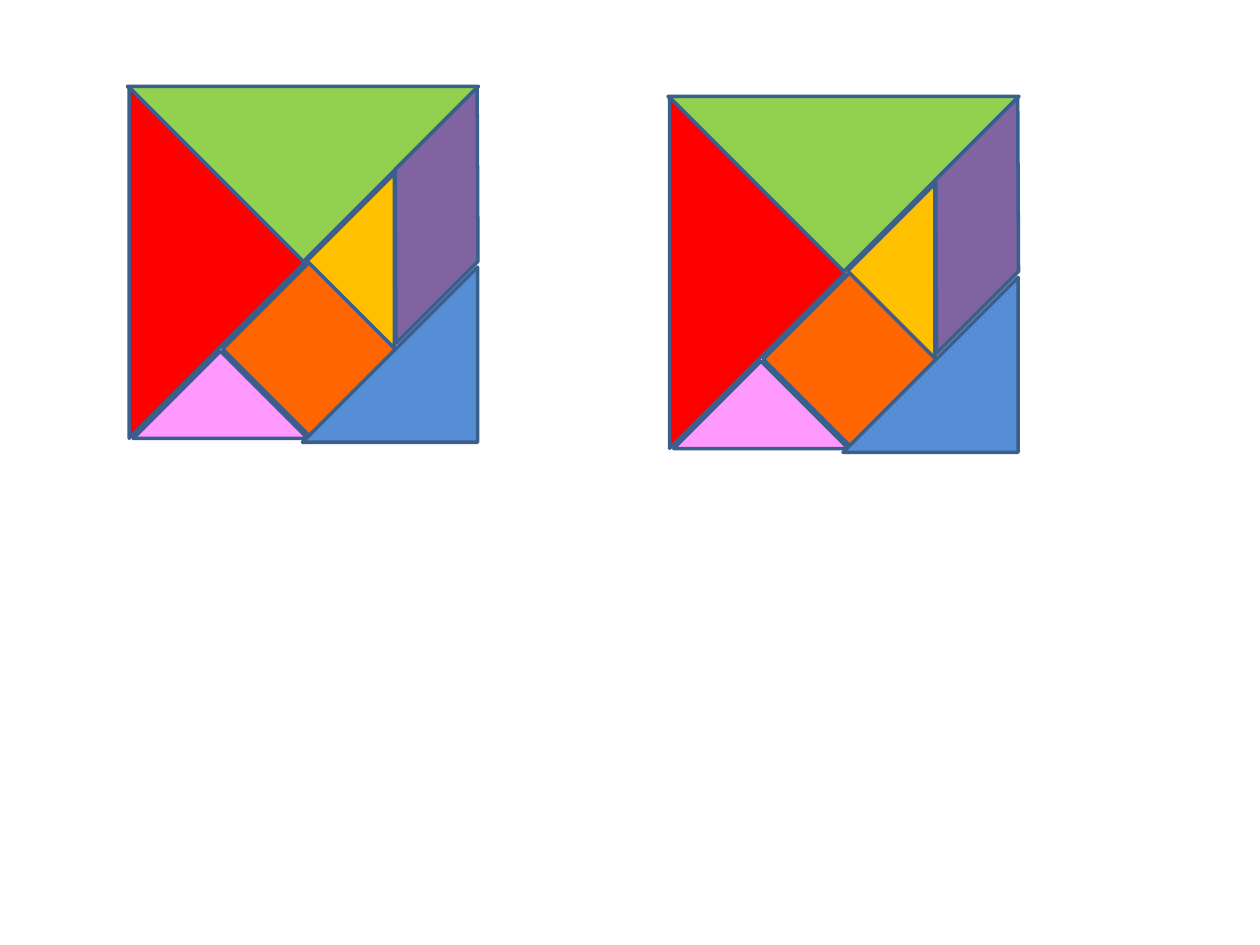
from dataclasses import dataclass

from pptx import Presentation
from pptx.dml.color import RGBColor
from pptx.enum.shapes import MSO_SHAPE
from pptx.util import Pt

PX = 9144
OUTLINE = "3A5F8C"
TRIANGLE = MSO_SHAPE.RIGHT_TRIANGLE


@dataclass(frozen=True)
class Piece:
    kind: MSO_SHAPE
    left: int
    top: int
    width: int
    height: int
    rotation: int
    fill: str
    slant: float | None = None


PIECES = [
    Piece(TRIANGLE, 142, -30, 197, 197, 315, "92D050"),
    Piece(TRIANGLE, 4, 110, 197, 197, 225, "FF0000"),
    Piece(MSO_SHAPE.RECTANGLE, 197, 228, 98, 98, 45, "FF6600"),
    Piece(TRIANGLE, 126, 299, 98, 98, 135, "FF99FF"),
    Piece(TRIANGLE, 264, 158, 98, 98, 45, "FFC000"),
    Piece(MSO_SHAPE.PARALLELOGRAM, 252, 122, 189, 98, 135, "8064A2", 0.99),
    Piece(TRIANGLE, 240, 212, 139, 139, 270, "558ED5"),
]
TANGRAM_OFFSETS = [(0, 0), (429, 8)]


def rgb(color: str) -> RGBColor:
    return RGBColor.from_string(color)


def draw_piece(s, piece: Piece, dx: int, dy: int) -> None:
    box = (piece.left + dx, piece.top + dy, piece.width, piece.height)
    sp = s.shapes.add_shape(piece.kind, *(v * PX for v in box))
    if piece.slant is not None:
        sp.adjustments[0] = piece.slant
    sp.rotation = piece.rotation
    sp.shadow.inherit = False
    sp.fill.solid()
    sp.fill.fore_color.rgb = rgb(piece.fill)
    sp.line.color.rgb = rgb(OUTLINE)
    sp.line.width = Pt(2)


def draw_tangram(s, dx: int, dy: int) -> None:
    for piece in PIECES:
        draw_piece(s, piece, dx, dy)


def main() -> None:
    prs = Presentation()
    prs.slide_width = 1000 * PX
    prs.slide_height = 750 * PX
    s = prs.slides.add_slide(prs.slide_layouts[6])
    for dx, dy in TANGRAM_OFFSETS:
        draw_tangram(s, dx, dy)
    prs.save("out.pptx")


if __name__ == "__main__":
    main()
